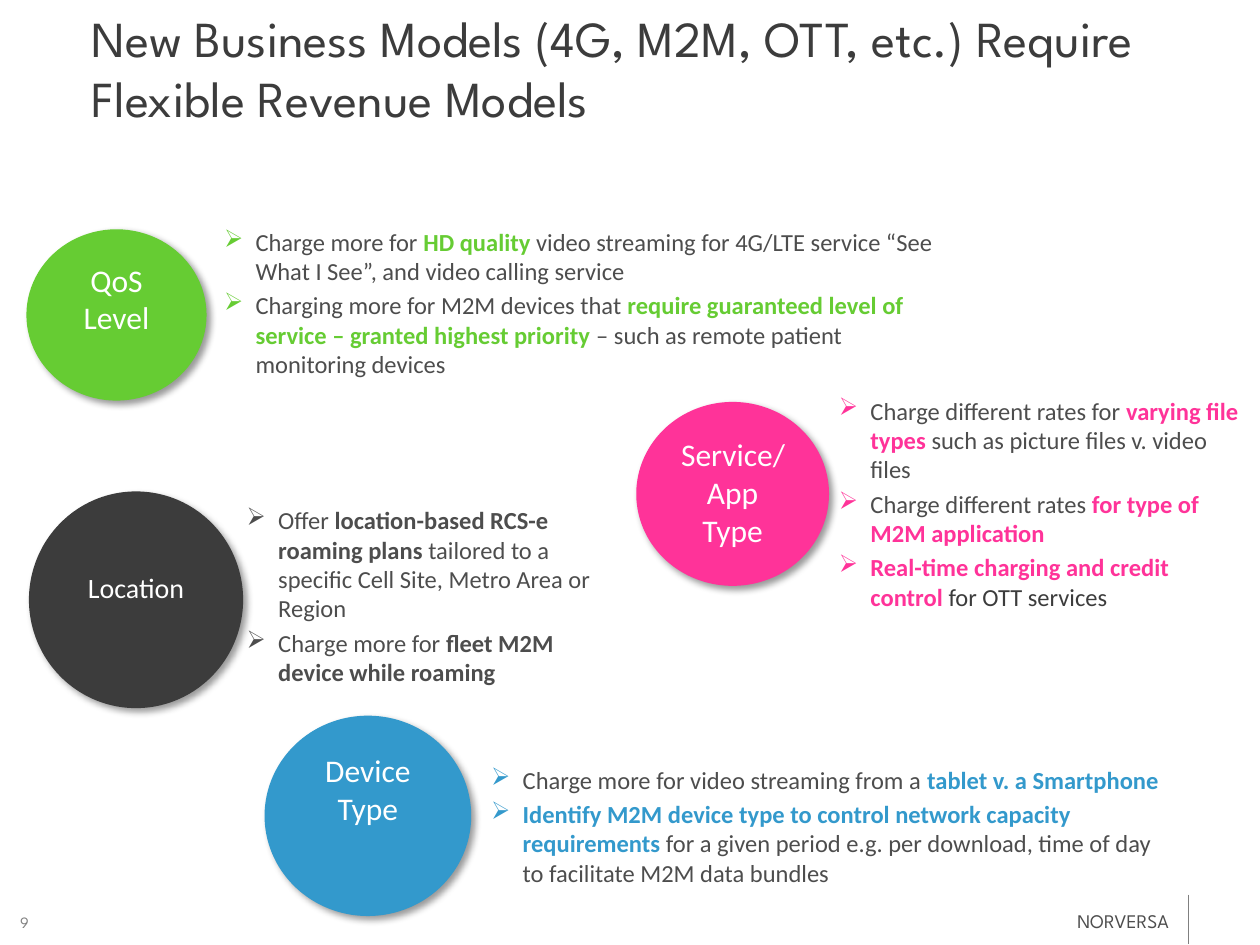
from lxml import etree
from pptx import Presentation
from pptx import util as u
from pptx.dml.color import RGBColor
from pptx.enum import shapes, text
from pptx.oxml import parse_xml
from pptx.oxml.ns import qn

INK, BODY, GREY, WHITE = "3C3C3C", "4D4D4D", "808080", "FFFFFF"
GREEN, PINK, BLUE = "66CC33", "FF3399", "3399CC"
HEADING_FONT, BODY_FONT = "League Spartan", "Calibri"
NAMESPACE = "http://schemas.openxmlformats.org/drawingml/2006/main"


def colour(value):
    return RGBColor.from_string(value)


def inches(box):
    return [u.Inches(length) for length in box]


def add_span(para, words, size, hue, font=BODY_FONT, bold=False):
    span = para.add_run()
    span.text = words
    span.font.size = u.Pt(size)
    span.font.name = font
    span.font.bold = bold
    span.font.color.rgb = colour(hue)


def add_text_box(page, box, inset=True, wrap=True):
    frame = page.shapes.add_textbox(*inches(box)).text_frame
    frame.word_wrap = wrap
    if not inset:
        frame.margin_left = frame.margin_right = 0
        frame.margin_top = frame.margin_bottom = 0
    return frame


def add_bullet(para, hue, left):
    props = para._p.get_or_add_pPr()
    props.set("marL", str(u.Inches(left)))
    props.set("indent", str(u.Inches(-0.25)))
    tint = etree.SubElement(props, qn("a:buClr"))
    etree.SubElement(tint, qn("a:srgbClr"), val=hue)
    etree.SubElement(props, qn("a:buChar"), char="➢")


def add_shadow(shape):
    shape.shadow.inherit = False
    effects = shape._element.spPr.find(qn("a:effectLst"))
    effects.append(parse_xml(
        f'<a:outerShdw xmlns:a="{NAMESPACE}" blurRad="{u.Pt(4)}" dist="{u.Pt(3)}" '
        'dir="2700000" algn="ctr" rotWithShape="0"><a:srgbClr val="000000">'
        '<a:alpha val="40000"/></a:srgbClr></a:outerShdw>'))


def add_title(page, box):
    frame = add_text_box(page, box)
    frame.vertical_anchor = text.MSO_ANCHOR.MIDDLE
    para = frame.paragraphs[0]
    para._p.get_or_add_pPr().set("marL", str(u.Inches(0.63)))
    add_span(para, "New Business Models (4G, M2M, OTT, etc.) Require Flexible Revenue Models",
             28.8, INK, HEADING_FONT)


def add_circle(page, box, label, hue, size=18, top=0.05):
    circle = page.shapes.add_shape(shapes.MSO_SHAPE.OVAL, *inches(box))
    circle.fill.solid()
    circle.fill.fore_color.rgb = colour(hue)
    circle.line.fill.background()
    add_shadow(circle)
    frame = circle.text_frame
    frame.word_wrap = True
    frame.vertical_anchor = text.MSO_ANCHOR.TOP
    frame.margin_top = u.Inches(top)
    para = frame.paragraphs[0]
    para.alignment = text.PP_ALIGN.CENTER
    add_span(para, label, size, WHITE)


def add_points(page, box, points, accent, bullet_hue, left=0.88):
    """Each point is a list of (words, hue); the accent hue None means bold accent."""
    frame = add_text_box(page, box)
    for number, point in enumerate(points):
        para = frame.add_paragraph() if number else frame.paragraphs[0]
        add_bullet(para, bullet_hue, left)
        if number:
            para.space_before = u.Pt(2.8)
        for words, hue in point:
            add_span(para, words, 14, hue or accent, bold=hue is None)


def add_footer(page, box):
    left, top, width, height = box
    # Page number
    number = add_text_box(page, (left, top + 0.14, 0.29, 0.15), inset=False)
    number.vertical_anchor = text.MSO_ANCHOR.MIDDLE
    add_span(number.paragraphs[0], "9", 9, GREY, HEADING_FONT)
    # Company name and rule
    right = left + width
    company = add_text_box(page, (right - 0.88, top + 0.12, 0.84, 0.19), inset=False, wrap=False)
    add_span(company.paragraphs[0], "NORVERSA", 11, BODY, HEADING_FONT)
    rule = page.shapes.add_connector(shapes.MSO_CONNECTOR.STRAIGHT,
                                     *inches((right, top, right, top + height)))
    rule.line.color.rgb = colour(GREY)
    rule.line.width = u.Pt(0.25)
    etree.SubElement(rule._element.spPr, qn("a:effectLst"))


def main():
    deck = Presentation()
    deck.slide_width, deck.slide_height = u.Inches(10), u.Inches(7.5)
    page = deck.slides.add_slide(deck.slide_layouts[6])

    add_footer(page, (0.16, 7.1, 9.27, 0.39))
    add_title(page, (0, 0.07, 10, 0.93))

    # Quality of service
    add_circle(page, (0.21, 1.82, 1.43, 1.36), "QoS Level", GREEN)
    add_points(page, (1.05, 1.75, 6.54, 1.33), [
        [("Charge more for ", BODY), ("HD quality ", None),
         ("video streaming for 4G/LTE service “See What I See”, and video calling service", BODY)],
        [("Charging more for M2M devices that ", BODY),
         ("require guaranteed level of service – granted highest priority ", None),
         ("– such as remote patient monitoring devices", BODY)],
    ], GREEN, GREEN)

    # Service or application
    add_circle(page, (5.05, 3.19, 1.53, 1.46), "Service/App Type", PINK)
    add_points(page, (5.93, 3.09, 4.05, 1.84), [
        [("Charge different rates for ", BODY), ("varying file types ", None),
         ("such as picture files v. video files", BODY)],
        [("Charge different rates ", BODY), ("for type of M2M application", None)],
        [("Real-time charging and credit control ", None), ("for OTT services", INK)],
    ], PINK, PINK)

    # Location
    add_circle(page, (0.23, 3.9, 1.7, 1.72), "Location", INK, size=16, top=0.38)
    add_points(page, (1.86, 3.96, 3.12, 1.56), [
        [("Offer ", BODY), ("location-based RCS-e roaming plans ", None),
         ("tailored to a specific Cell Site, Metro Area or Region", BODY)],
        [("Charge more for ", BODY), ("fleet M2M device while roaming", None)],
    ], BODY, BODY, left=0.25)

    # Device
    add_circle(page, (2.1, 5.68, 1.64, 1.59), "Device Type", BLUE)
    add_points(page, (3.17, 6.02, 6.19, 1.09), [
        [("Charge more for video streaming from a ", BODY), ("tablet v. a Smartphone", None)],
        [("Identify M2M device type to control network capacity requirements ", None),
         ("for a given period e.g. per download, time of day to facilitate M2M data bundles", BODY)],
    ], BLUE, BLUE)

    deck.save("out.pptx")


if __name__ == "__main__":
    main()
